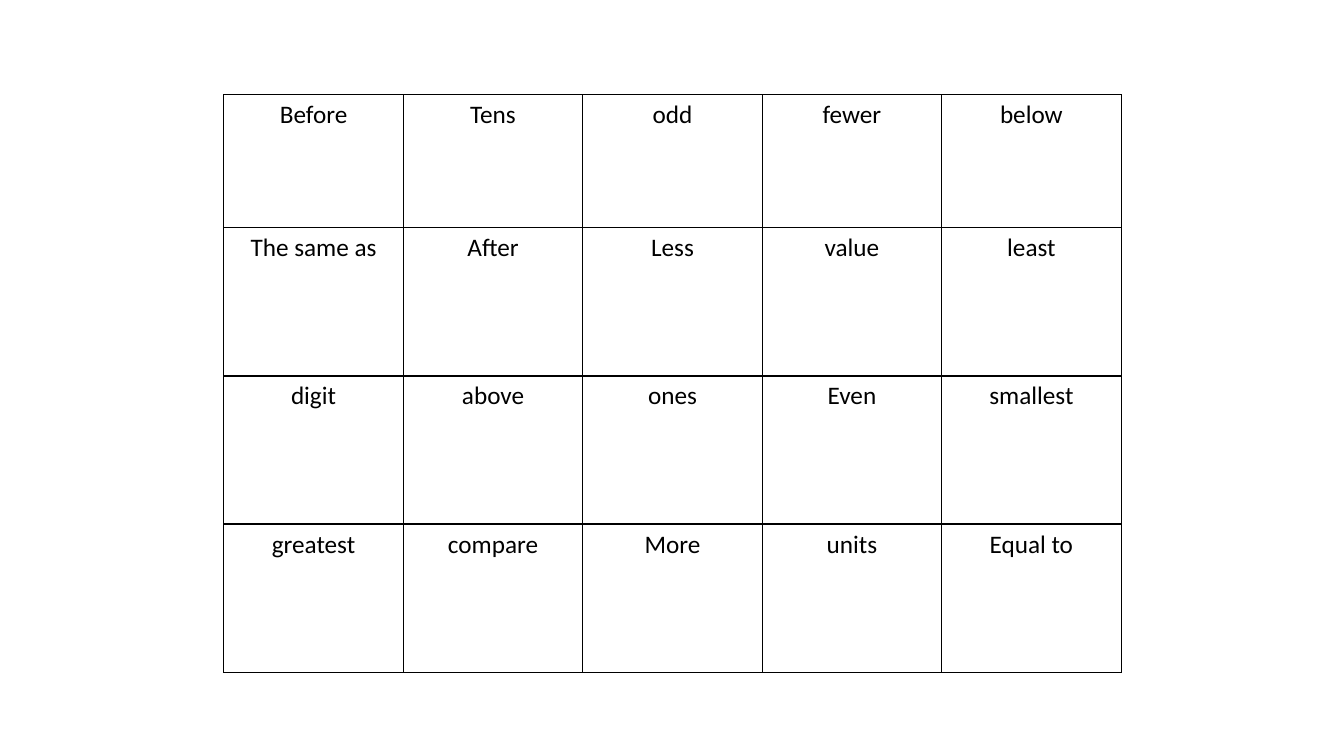
from pptx import Presentation
from pptx.dml.color import RGBColor
from pptx.enum.text import PP_ALIGN
from pptx.oxml import parse_xml
from pptx.oxml.ns import nsdecls
from pptx.util import Inches, Pt

WORDS = [
    ["Before", "Tens", "odd", "fewer", "below"],
    ["The same as", "After", "Less", "value", "least"],
    ["digit", "above", "ones", "Even", "smallest"],
    ["greatest", "compare", "More", "units", "Equal to"],
]
WIDTH = 1.78
HEIGHTS = [1.32, 1.47, 1.47, 1.47]
INK = "000000"
PAPER = "FFFFFF"


def paint(color, value):
    color.rgb = RGBColor.from_string(value)


def add_edges(cell, value, points):
    props = cell._tc.get_or_add_tcPr()
    for side in "LRTB":
        props.append(parse_xml(
            f'<a:ln{side} {nsdecls("a")} w="{Pt(points)}"><a:solidFill>'
            f'<a:srgbClr val="{value}"/></a:solidFill></a:ln{side}>'))


def fill_cell(cell, word):
    # Borders come before the fill in the cell properties
    add_edges(cell, INK, 1)
    cell.fill.solid()
    paint(cell.fill.fore_color, PAPER)
    cell.text = word
    para = cell.text_frame.paragraphs[0]
    para.alignment = PP_ALIGN.CENTER
    para.font.name = "Calibri"
    para.font.size = Pt(18)
    para.font.bold = False
    paint(para.font.color, INK)


def add_grid(slide, left, top):
    count = len(WORDS[0])
    frame = slide.shapes.add_table(
        len(WORDS), count, Inches(left), Inches(top),
        Inches(WIDTH * count), Inches(sum(HEIGHTS)))
    table = frame.table
    table.first_row = False
    table.horz_banding = False
    for col in table.columns:
        col.width = Inches(WIDTH)
    for row, height, words in zip(table.rows, HEIGHTS, WORDS):
        row.height = Inches(height)
        for cell, word in zip(row.cells, words):
            fill_cell(cell, word)


def main():
    deck = Presentation()
    deck.slide_width = Inches(13.33)
    deck.slide_height = Inches(7.5)
    slide = deck.slides.add_slide(deck.slide_layouts[6])

    # Word grid
    add_grid(slide, 2.22, 0.94)
    deck.save("out.pptx")


if __name__ == "__main__":
    main()
